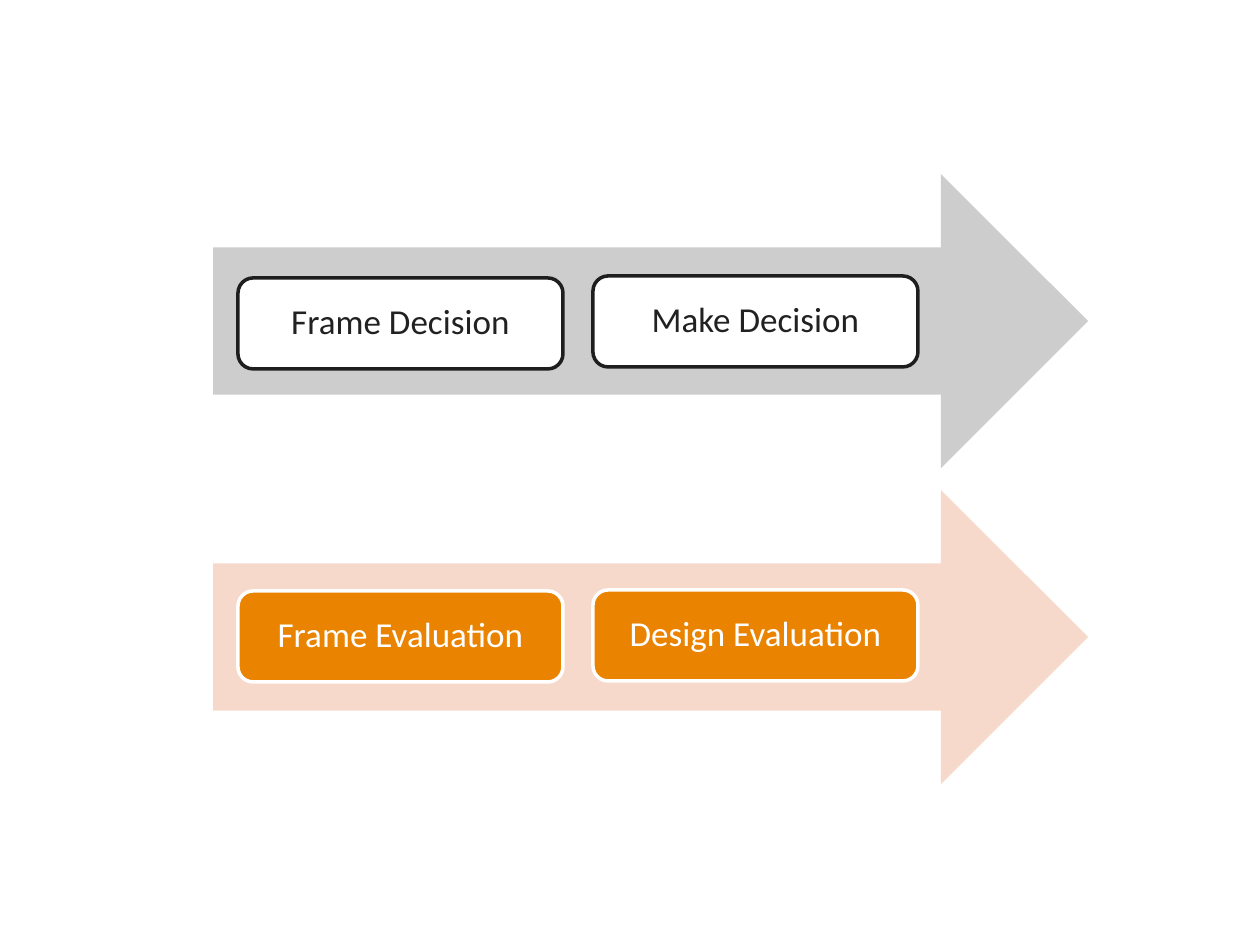
from pptx import Presentation
from pptx.dml.color import RGBColor
from pptx.enum.shapes import MSO_SHAPE
from pptx.enum.text import MSO_ANCHOR, PP_ALIGN
from pptx.util import Pt

ROWS = [
    dict(top=174, arrow="CDCDCD", fill="FFFFFF", line="1E1E1E", ink="212121",
         steps=[("Frame Decision", 278), ("Make Decision", 276)]),
    dict(top=490, arrow="F7D9CC", fill="E98300", line="FFFFFF", ink="FFFFFF",
         steps=[("Frame Evaluation", 591), ("Design Evaluation", 590)]),
]
LEFT, WIDE, HIGH = 213, 875, 294
STEP_X, STEP_W, STEP_H, GAP = 238, 325, 91, 30
INSET = 15


def px(n):
    return round(n * 914400 / 126)


def color(code):
    return RGBColor.from_string(code)


def draw(slide, kind, box, fill):
    shape = slide.shapes.add_shape(kind, *map(px, box))
    shape.shadow.inherit = False
    shape.fill.solid()
    shape.fill.fore_color.rgb = color(fill)
    shape.line.fill.background()
    return shape


def label(shape, text, ink):
    frame = shape.text_frame
    frame.text = text
    frame.word_wrap = True
    frame.vertical_anchor = MSO_ANCHOR.MIDDLE
    frame.margin_left = frame.margin_right = px(INSET)
    frame.margin_top = frame.margin_bottom = px(INSET)
    para = frame.paragraphs[0]
    para.alignment = PP_ALIGN.CENTER
    para.line_spacing = 0.9
    font = para.runs[0].font
    font.name = "Calibri"
    font.size = Pt(20)
    font.color.rgb = color(ink)


def main():
    deck = Presentation()
    deck.slide_width, deck.slide_height = px(1260), px(945)
    slide = deck.slides.add_slide(deck.slide_layouts[6])
    for row in ROWS:
        draw(slide, MSO_SHAPE.RIGHT_ARROW, (LEFT, row["top"], WIDE, HIGH), row["arrow"])
        for i, (text, top) in enumerate(row["steps"]):
            left = STEP_X + i * (STEP_W + GAP)
            step = draw(slide, MSO_SHAPE.ROUNDED_RECTANGLE,
                        (left, top, STEP_W, STEP_H), row["fill"])
            step.line.color.rgb = color(row["line"])
            step.line.width = Pt(2)
            label(step, text, row["ink"])
    deck.save("out.pptx")


if __name__ == "__main__":
    main()
